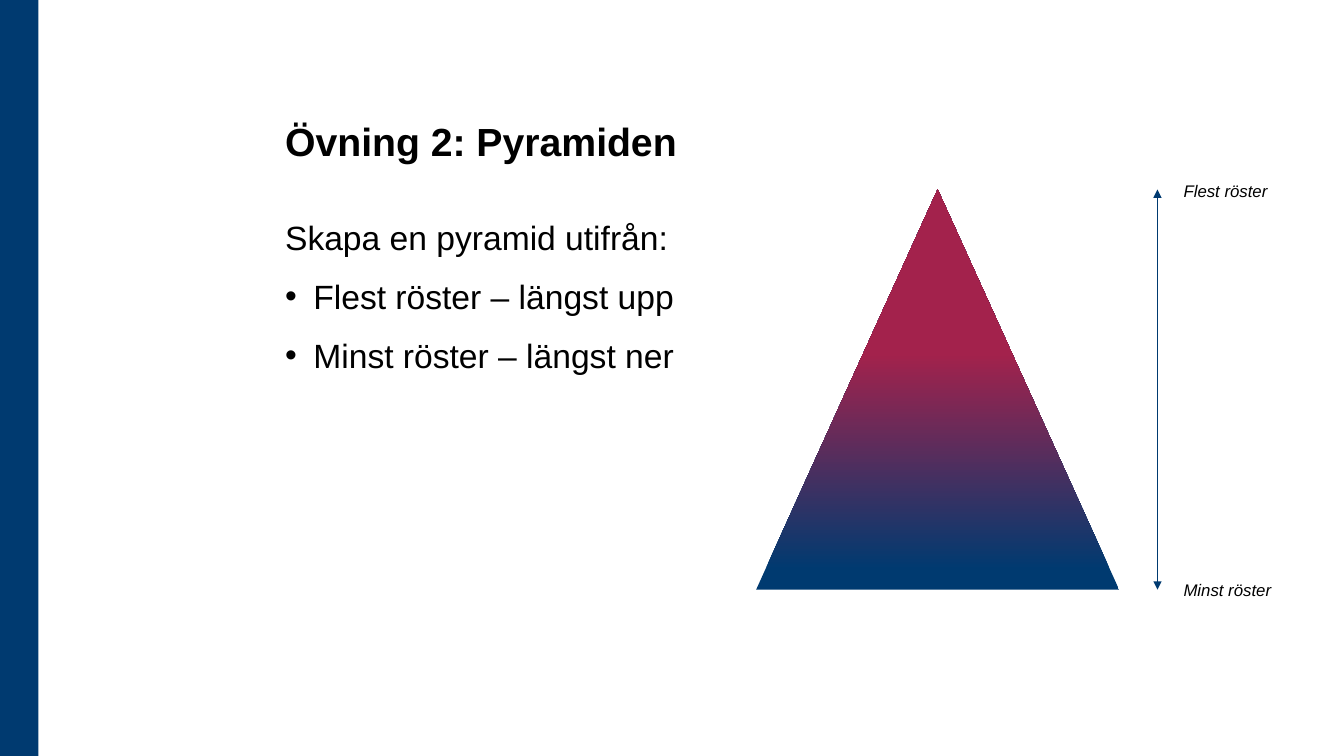
import lxml.etree
import pptx
import pptx.dml.color
import pptx.enum.shapes
import pptx.enum.text
import pptx.oxml.ns
import pptx.util

Inches = pptx.util.Inches
Pt = pptx.util.Pt
qn = pptx.oxml.ns.qn
Shapes = pptx.enum.shapes.MSO_SHAPE
Anchor = pptx.enum.text.MSO_ANCHOR

NAVY = pptx.dml.color.RGBColor(0x00, 0x3A, 0x70)
CRIMSON = pptx.dml.color.RGBColor(0xA3, 0x22, 0x4C)
BLACK = pptx.dml.color.RGBColor(0x00, 0x00, 0x00)

PYRAMID_TOP = 1.88
PYRAMID_HEIGHT = 3.97
PYRAMID_BOTTOM = PYRAMID_TOP + PYRAMID_HEIGHT
ARROW_X = 11.48

deck = pptx.Presentation()
deck.slide_width = Inches(13.33)
deck.slide_height = Inches(7.5)
page = deck.slides.add_slide(deck.slide_layouts[6])


def add_text(text, left, top, width, height, size, bold=False, italic=False,
             anchor=Anchor.TOP, wrap=True, space=0, line_spacing=1.0, bullets_from=None):
    """Add a text box, one paragraph per line; lines from index bullets_from on get bullets."""
    box = page.shapes.add_textbox(Inches(left), Inches(top), Inches(width), Inches(height))
    frame = box.text_frame
    frame.word_wrap = wrap
    frame.vertical_anchor = anchor
    frame.text = text
    for index, para in enumerate(frame.paragraphs):
        para.line_spacing = line_spacing
        if index:
            para.space_before = Pt(space)
        if bullets_from is not None and index >= bullets_from:
            props = para._p.get_or_add_pPr()
            props.set("marL", str(Inches(0.28)))
            props.set("indent", str(-Inches(0.28)))
            lxml.etree.SubElement(props, qn("a:buFont")).set("typeface", "Arial")
            lxml.etree.SubElement(props, qn("a:buChar")).set("char", "•")
        for span in para.runs:
            span.font.name = "Arial"
            span.font.size = Pt(size)
            span.font.bold = bold
            span.font.italic = italic
            span.font.color.rgb = BLACK


# Side band
band = page.shapes.add_shape(Shapes.RECTANGLE, 0, 0, Inches(0.38), deck.slide_height)
band.shadow.inherit = False
band.fill.solid()
band.fill.fore_color.rgb = NAVY
band.line.fill.background()

# Title and instructions
add_text("Övning 2: Pyramiden", 2.73, 1.06, 7.87, 0.62, size=28, bold=True,
         anchor=Anchor.BOTTOM)
add_text("Skapa en pyramid utifrån:\nFlest röster – längst upp\nMinst röster – längst ner",
         2.73, 2.09, 4.67, 3.54, size=24, space=12, line_spacing=1.04, bullets_from=1)

# Pyramid, navy at the base and crimson at the tip
pyramid = page.shapes.add_shape(Shapes.ISOSCELES_TRIANGLE, Inches(7.5), Inches(PYRAMID_TOP),
                                Inches(3.6), Inches(PYRAMID_HEIGHT))
pyramid.shadow.inherit = False
pyramid.line.fill.background()
pyramid.fill.gradient()
pyramid.fill.gradient_angle = 90
for stop, (position, color) in zip(pyramid.fill.gradient_stops, [(0.05, NAVY), (0.59, CRIMSON)]):
    stop.position = position
    stop.color.rgb = color

# Vote scale
arrow = page.shapes.add_connector(pptx.enum.shapes.MSO_CONNECTOR.STRAIGHT,
                                  Inches(ARROW_X), Inches(PYRAMID_TOP),
                                  Inches(ARROW_X), Inches(PYRAMID_BOTTOM))
arrow.line.color.rgb = NAVY
arrow.line.width = Pt(0.5)
for end in ("a:headEnd", "a:tailEnd"):
    lxml.etree.SubElement(arrow.line._get_or_add_ln(), qn(end)).set("type", "triangle")
lxml.etree.SubElement(arrow._element.spPr, qn("a:effectLst"))

for label, top, width in [("Flest röster", 1.74, 1.09), ("Minst röster", 5.7, 1.13)]:
    add_text(label, 11.64, top, width, 0.3, size=12, italic=True, wrap=False)

deck.save("out.pptx")
